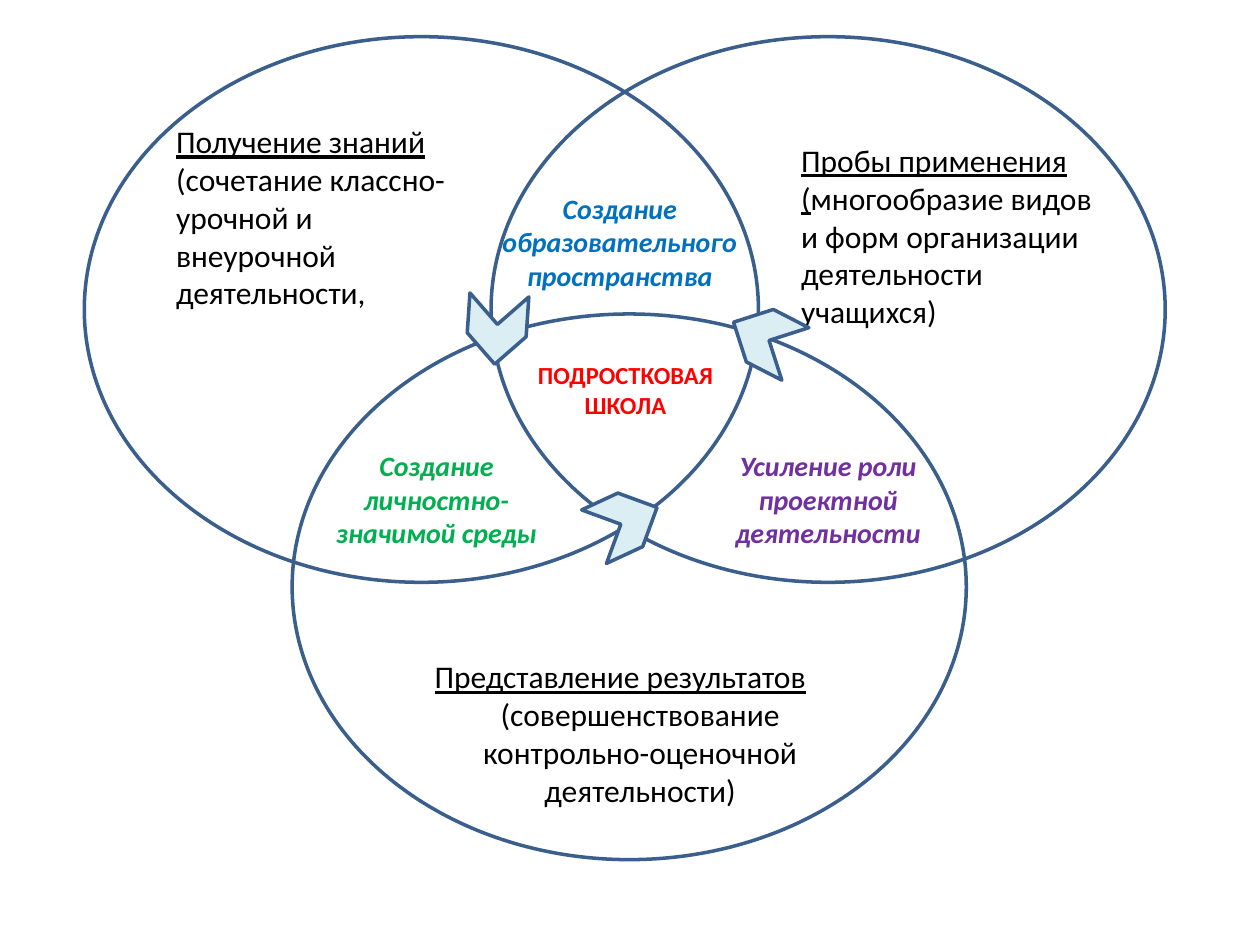
from pptx import Presentation
from pptx.util import Cm, Pt
from pptx.dml.color import RGBColor
from pptx.enum.shapes import MSO_SHAPE
from pptx.enum.text import PP_ALIGN, MSO_AUTO_SIZE

BLACK = RGBColor(0x00, 0x00, 0x00)
RED = RGBColor(0xFF, 0x00, 0x00)
VIOLET = RGBColor(0x70, 0x30, 0xA0)
GREEN = RGBColor(0x00, 0xB0, 0x50)
BLUE = RGBColor(0x00, 0x70, 0xC0)
EDGE = RGBColor(0x3A, 0x5F, 0x8C)
PALE = RGBColor(0xDB, 0xEE, 0xF4)

LEFT, MID = PP_ALIGN.LEFT, PP_ALIGN.CENTER
PLAIN = {"size": Pt(18), "name": "Calibri"}
HEAD = {**PLAIN, "underline": True}
CORE = {"size": Pt(14), "name": "Calibri", "bold": True}
LINK = {"size": Pt(16), "name": "Calibri", "bold": True, "italic": True}

# Offsets within the diagram, in cm
RINGS = [(0, 0), (8.2, 0), (4.19, 5.59)]
ARROWS = [(7.62, 5.31, 93.9), (13.01, 5.48, 207.2), (10.21, 9.19, 335.1)]

# Box, colour, paragraphs: (alignment, runs)
STAGES = [
    ((1.6, 1.6, 6.6, 4.11), BLACK, [
        (LEFT, [("Получение знаний ", HEAD),
                ("(сочетание классно-урочной и внеурочной деятельности,", PLAIN)])]),
    ((14.2, 1.98, 6.6, 4.11), BLACK, [
        (LEFT, [("Пробы применения", HEAD)]),
        (LEFT, [("(", HEAD),
                ("многообразие видов и форм организации деятельности учащихся)", PLAIN)])]),
    ((6.81, 12.39, 8.79, 3.33), BLACK, [
        (LEFT, [("Представление результатов", HEAD)]),
        (MID, [("(совершенствование контрольно-оценочной деятельности)", PLAIN)])]),
]
LINKS = [
    ((8.61, 6.4, 4.6, 1.45), RED, "ПОДРОСТКОВАЯ ШКОЛА", CORE),
    ((12.8, 8.18, 4.39, 2.31), VIOLET, "Усиление роли проектной деятельности", LINK),
    ((4.6, 8.18, 5, 2.31), GREEN, "Создание личностно-значимой среды", LINK),
    ((8, 2.99, 5.59, 2.31), BLUE, "Создание образовательного пространства", LINK),
]


def outline(slide, kind, x, y, w, h, fill=None, turn=0):
    shape = slide.shapes.add_shape(kind, Cm(x), Cm(y), Cm(w), Cm(h))
    shape.shadow.inherit = False
    shape.rotation = turn
    shape.line.color.rgb = EDGE
    shape.line.width = Pt(2)
    if fill is None:
        shape.fill.background()
    else:
        shape.fill.solid()
        shape.fill.fore_color.rgb = fill


def label(slide, x, y, w, h, color, paras):
    frame = slide.shapes.add_textbox(Cm(x), Cm(y), Cm(w), Cm(h)).text_frame
    frame.word_wrap = True
    frame.auto_size = MSO_AUTO_SIZE.SHAPE_TO_FIT_TEXT
    for i, (align, runs) in enumerate(paras):
        para = frame.add_paragraph() if i else frame.paragraphs[0]
        para.alignment = align
        for text, style in runs:
            run = para.add_run()
            run.text = text
            run.font.color.rgb = color
            for key, value in style.items():
                setattr(run.font, key, value)


def venn(slide, left, top):
    # Three overlapping rings
    for x, y in RINGS:
        outline(slide, MSO_SHAPE.OVAL, left + x, top + y, 13.59, 11)
    # Stages in the rings, then the labels where rings overlap
    overlaps = [(box, color, [(MID, [(text, style)])])
                for box, color, text, style in LINKS]
    for (x, y, w, h), color, paras in STAGES + overlaps:
        label(slide, left + x, top + y, w, h, color, paras)
    # Chevrons showing the cycle
    for x, y, turn in ARROWS:
        outline(slide, MSO_SHAPE.CHEVRON, left + x, top + y, 1.4, 1.19, PALE, turn)


def main():
    deck = Presentation()
    deck.slide_width, deck.slide_height = Cm(25.4), Cm(19.05)
    slide = deck.slides.add_slide(deck.slide_layouts[6])
    venn(slide, 1.7, 0.74)
    deck.save("out.pptx")


if __name__ == "__main__":
    main()
